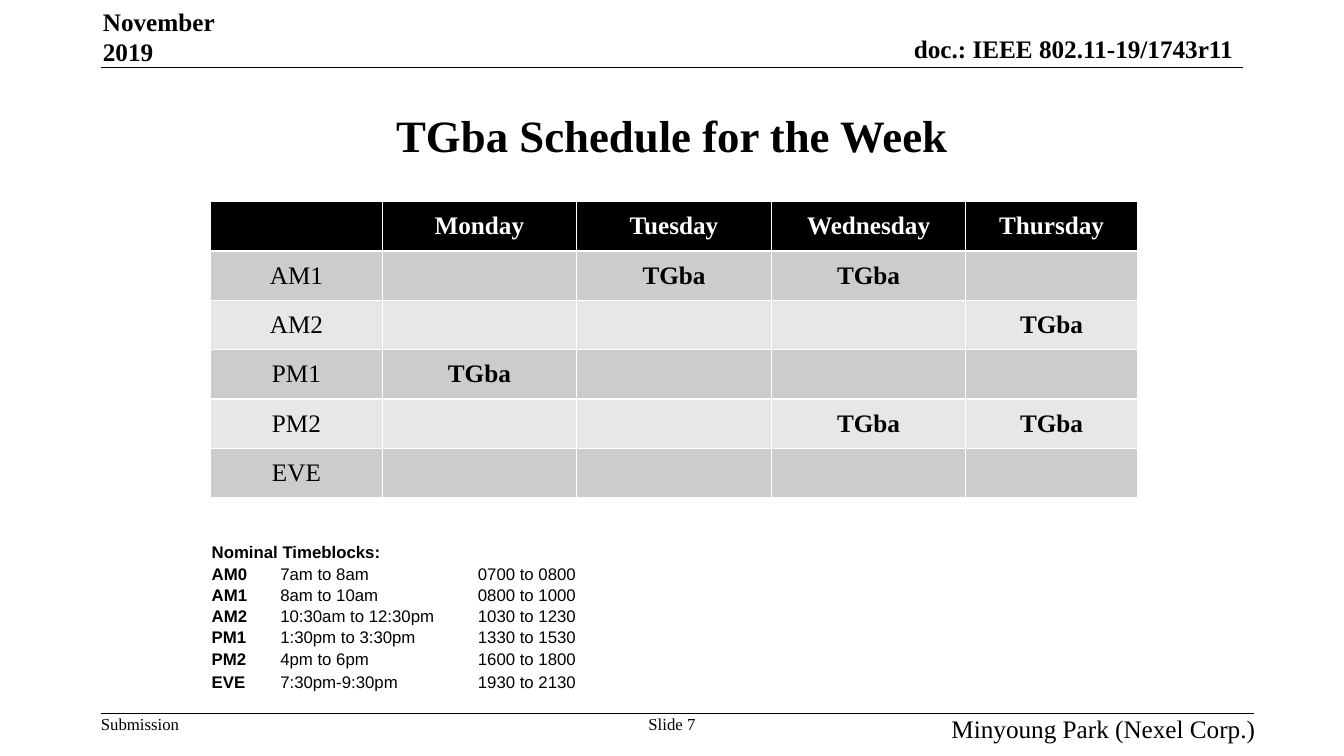
from lxml import etree
from pptx import Presentation
from pptx.dml.color import RGBColor
from pptx.enum.shapes import MSO_CONNECTOR
from pptx.enum.text import MSO_ANCHOR, PP_ALIGN
from pptx.oxml.ns import qn
from pptx.util import Inches, Pt

LEFT, MID, RIGHT = PP_ALIGN.LEFT, PP_ALIGN.CENTER, PP_ALIGN.RIGHT
TOP, CENTRE, BASE = MSO_ANCHOR.TOP, MSO_ANCHOR.MIDDLE, MSO_ANCHOR.BOTTOM
STRAIGHT = MSO_CONNECTOR.STRAIGHT
SERIF, SANS = "Times New Roman", "Arial"
BLACK, WHITE, DARK, PALE = "000000", "FFFFFF", "CCCCCC", "E7E7E7"

# text, (left, top, width, height), size, bold, align, anchor, wrap
LABELS = [
    ("doc.: IEEE 802.11-19/1743r11", (8.51, 0.33, 3.72, 0.3), 18, True, RIGHT, BASE, False),
    ("November 2019", (1.02, 0.36, 1.29, 0.3), 18, True, LEFT, BASE, False),
    ("TGba Schedule for the Week", (1, 0.75, 11.33, 1.17), 32, True, MID, CENTRE, True),
    ("Submission", (1, 7.08, 0.79, 0.2), 12, False, LEFT, TOP, False),
    ("Slide 7", (6.43, 7.08, 0.47, 0.2), 12, False, MID, TOP, False),
    ("Minyoung Park (Nexel Corp.)", (8.44, 7.08, 4.01, 0.2), 18, False, RIGHT, TOP, True),
]
RULES = [(1, 12.33, 0.67), (1, 12.44, 7.08)]  # from x, to x, y

WEEK = [
    ("", "Monday", "Tuesday", "Wednesday", "Thursday"),
    ("AM1", "", "TGba", "TGba", ""),
    ("AM2", "", "", "", "TGba"),
    ("PM1", "TGba", "", "", ""),
    ("PM2", "", "", "TGba", "TGba"),
    ("EVE", "", "", "", ""),
]
WEEK_COLS = [1.7, 1.93, 1.93, 1.93, 1.7]
WEEK_ROWS = [0.49] * len(WEEK)

BLOCKS = [
    ("Nominal Timeblocks:", "", "", "", ""),
    ("AM0", "7am to 8am", "", "0700 to 0800", ""),
    ("AM1", "8am to 10am", "", "0800 to 1000", ""),
    ("AM2", "10:30am to 12:30pm", "", "1030 to 1230", ""),
    ("PM1", "1:30pm to 3:30pm", "", "1330 to 1530", ""),
    ("PM2", "4pm to 6pm", "", "1600 to 1800", ""),
    ("EVE", "7:30pm-9:30pm", "", "1930 to 2130", ""),
]
BLOCK_COLS = [0.68, 1.31, 0.65, 0.66, 0.66]
BLOCK_ROWS = [0.18, 0.21, 0.18, 0.18, 0.18, 0.22, 0.22]
FIT = 11  # longest time that fits one column


def rgb(code):
    return RGBColor.from_string(code)


def write(frame, text, size, bold, align, color=BLACK, face=SERIF):
    para = frame.paragraphs[0]
    para.text = text
    para.alignment = align
    for run in para.runs:
        font = run.font
        font.name, font.size, font.bold = face, Pt(size), bold
        font.color.rgb = rgb(color)
    if not text:
        # An empty cell takes its height from the end mark.
        etree.SubElement(para._p, qn("a:endParaRPr"), sz=str(size * 100))


def inset(box, left, top, right, bottom):
    box.margin_left, box.margin_top = Inches(left), Inches(top)
    box.margin_right, box.margin_bottom = Inches(right), Inches(bottom)


def border(cell):
    """Draw a thin white line on each side, placed before the fill."""
    props = cell._tc.get_or_add_tcPr()
    for spot, side in enumerate(("a:lnL", "a:lnR", "a:lnT", "a:lnB")):
        line = etree.Element(qn(side), w=str(Pt(1)))
        fill = etree.SubElement(line, qn("a:solidFill"))
        etree.SubElement(fill, qn("a:srgbClr"), val=WHITE)
        props.insert(spot, line)


def grid(left, top, cols, rows):
    table = slide.shapes.add_table(
        len(rows), len(cols), Inches(left), Inches(top),
        Inches(sum(cols)), Inches(sum(rows))).table
    table.first_row = table.horz_banding = False
    for col, width in zip(table.columns, cols):
        col.width = Inches(width)
    for row, height in zip(table.rows, rows):
        row.height = Inches(height)
    return table


deck = Presentation()
deck.slide_width, deck.slide_height = Inches(13.33), Inches(7.5)
slide = deck.slides.add_slide(deck.slide_layouts[6])

for start, end, y in RULES:
    rule = slide.shapes.add_connector(
        STRAIGHT, Inches(start), Inches(y), Inches(end), Inches(y))
    rule.line.color.rgb = rgb(BLACK)
    rule.line.width = Pt(1)
    etree.SubElement(rule._element.spPr, qn("a:effectLst"))

for text, place, size, bold, align, anchor, wrap in LABELS:
    frame = slide.shapes.add_textbox(*map(Inches, place)).text_frame
    frame.word_wrap = wrap
    frame.vertical_anchor = anchor
    inset(frame, 0, 0, 0, 0)
    write(frame, text, size, bold, align)

week = grid(2.09, 2, WEEK_COLS, WEEK_ROWS)
for r, row in enumerate(WEEK):
    shade = BLACK if r == 0 else DARK if r % 2 else PALE
    for c, text in enumerate(row):
        cell = week.cell(r, c)
        cell.fill.solid()
        cell.fill.fore_color.rgb = rgb(shade)
        border(cell)
        cell.vertical_anchor = CENTRE
        write(cell.text_frame, text, 18, r == 0 or c > 0, MID,
              BLACK if r else WHITE)

blocks = grid(2.09, 5.37, BLOCK_COLS, BLOCK_ROWS)
for r, row in enumerate(BLOCKS):
    for c, text in enumerate(row):
        cell = blocks.cell(r, c)
        cell.fill.background()
        cell.vertical_anchor = BASE
        inset(cell, 0.01, 0.01, 0.01, 0)
        write(cell.text_frame, text, 12, c == 0, LEFT, face=SANS)
    if r == 0:
        blocks.cell(r, 0).merge(blocks.cell(r, 2))
        continue
    if len(row[1]) > FIT:
        blocks.cell(r, 1).merge(blocks.cell(r, 2))
    blocks.cell(r, 3).merge(blocks.cell(r, 4))

deck.save("out.pptx")
